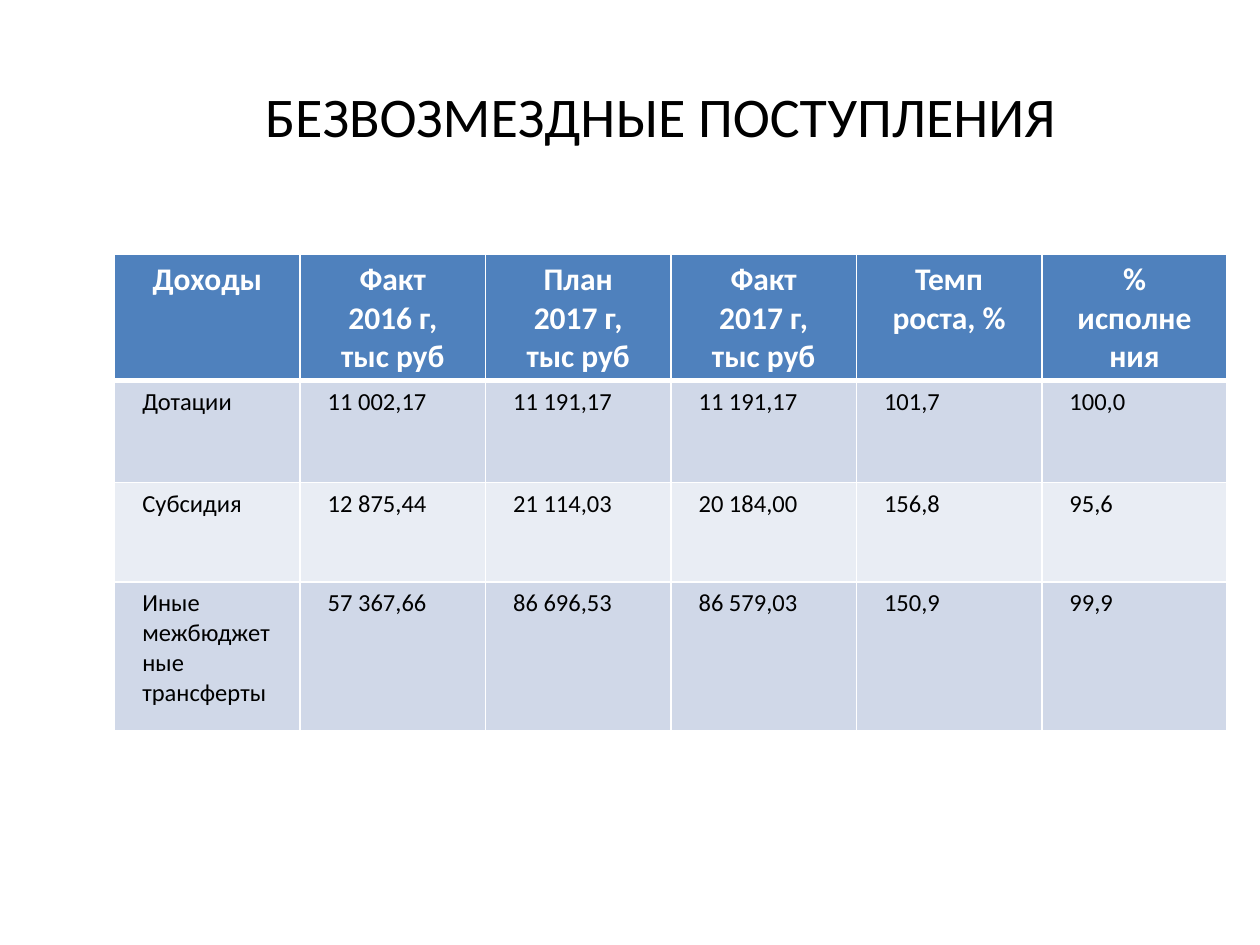
import pptx
import pptx.dml.color
import pptx.enum.text
import pptx.oxml
import pptx.oxml.ns
import pptx.util
from dataclasses import dataclass
from pptx.util import Inches


@dataclass(frozen=True)
class Theme:
    font: str = "Calibri"
    ink: str = "000000"
    white: str = "FFFFFF"
    header: str = "4F81BD"
    bands: tuple = ("D0D8E8", "E9EDF4")
    title_size: int = 32
    header_size: int = 18
    body_size: int = 14
    rule: int = 1
    header_rule: int = 3


THEME = Theme()
ALIGN = pptx.enum.text.PP_ALIGN

HEADINGS = ("Доходы", "Факт 2016 г, тыс руб", "План 2017 г, тыс руб",
            "Факт 2017 г, тыс руб", "Темп роста, %", "% исполнения")
INCOMES = (
    ("Дотации", "11 002,17", "11 191,17", "11 191,17", "101,7", "100,0"),
    ("Субсидия", "12 875,44", "21 114,03", "20 184,00", "156,8", "95,6"),
    ("Иные межбюджетные трансферты", "57 367,66", "86 696,53", "86 579,03",
     "150,9", "99,9"),
)
ROW_HEIGHTS = (0.89, 0.81, 0.79, 1.18)
TABLE_WIDTH = 8.83


def write(frame, text, size, color, bold=False, align=ALIGN.LEFT):
    frame.text = text
    frame.word_wrap = True
    paragraph = frame.paragraphs[0]
    paragraph.alignment = align
    for run in paragraph.runs:
        run.font.name = THEME.font
        run.font.size = pptx.util.Pt(size)
        run.font.bold = bold
        run.font.color.rgb = pptx.dml.color.RGBColor.from_string(color)


def add_title(slide, text):
    title = slide.shapes.add_textbox(
        Inches(0.83), Inches(0.29), Inches(8.83), Inches(1.25))
    title.text_frame.vertical_anchor = pptx.enum.text.MSO_ANCHOR.MIDDLE
    write(title.text_frame, text, THEME.title_size, THEME.ink,
          align=ALIGN.CENTER)


def set_borders(cell, top, bottom):
    widths = {"lnL": THEME.rule, "lnR": THEME.rule, "lnT": top, "lnB": bottom}
    properties = cell._tc.get_or_add_tcPr()
    # Borders precede the fill in the cell properties
    for position, (side, width) in enumerate(widths.items()):
        properties.insert(position, pptx.oxml.parse_xml(
            f'<a:{side} {pptx.oxml.ns.nsdecls("a")} w="{pptx.util.Pt(width)}">'
            f'<a:solidFill><a:srgbClr val="{THEME.white}"/></a:solidFill>'
            f'</a:{side}>'))


def style_cell(cell, fill):
    cell.margin_left = cell.margin_right = Inches(0.22)
    cell.margin_top = cell.margin_bottom = Inches(0.05)
    cell.fill.solid()
    cell.fill.fore_color.rgb = pptx.dml.color.RGBColor.from_string(fill)


def add_income_table(slide):
    rows = (HEADINGS, *INCOMES)
    incomes = slide.shapes.add_table(
        len(rows), len(HEADINGS), Inches(0.91), Inches(2.02),
        Inches(TABLE_WIDTH), Inches(sum(ROW_HEIGHTS))).table
    for column in incomes.columns:
        column.width = Inches(TABLE_WIDTH / len(HEADINGS))
    for r, (values, height) in enumerate(zip(rows, ROW_HEIGHTS)):
        incomes.rows[r].height = Inches(height)
        for c, value in enumerate(values):
            cell = incomes.cell(r, c)
            if r == 0:
                style_cell(cell, THEME.header)
                write(cell.text_frame, value, THEME.header_size, THEME.white,
                      bold=True, align=ALIGN.CENTER)
            else:
                style_cell(cell, THEME.bands[(r - 1) % 2])
                write(cell.text_frame, value, THEME.body_size, THEME.ink)
            set_borders(cell,
                        top=THEME.header_rule if r == 1 else THEME.rule,
                        bottom=THEME.header_rule if r == 0 else THEME.rule)


def main():
    deck = pptx.Presentation()
    deck.slide_width, deck.slide_height = Inches(10), Inches(7.5)
    slide = deck.slides.add_slide(deck.slide_layouts[6])

    # Heading
    add_title(slide, "БЕЗВОЗМЕЗДНЫЕ ПОСТУПЛЕНИЯ")
    # Incomes by kind
    add_income_table(slide)

    deck.save("out.pptx")


if __name__ == "__main__":
    main()
